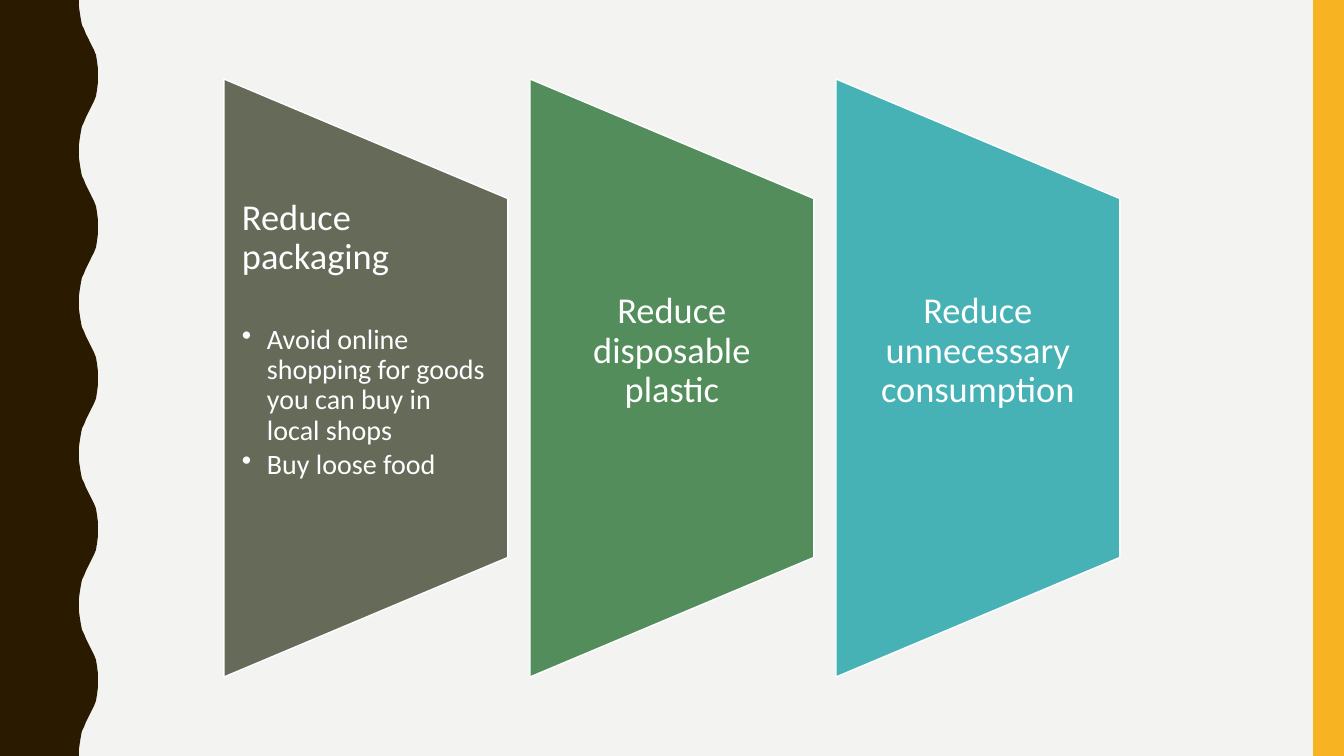
from lxml.etree import SubElement
from pptx import Presentation
from pptx.dml.color import RGBColor
from pptx.enum.shapes import MSO_SHAPE
from pptx.enum.text import MSO_ANCHOR, PP_ALIGN
from pptx.oxml.ns import qn
from pptx.util import Emu, Pt

BACKGROUND = RGBColor(0xF3, 0xF3, 0xF2)
BROWN = RGBColor(0x2A, 0x1A, 0x00)
AMBER = RGBColor(0xF8, 0xB3, 0x23)
OLIVE = RGBColor(0x65, 0x6A, 0x59)
GREEN = RGBColor(0x52, 0x8D, 0x5B)
TEAL = RGBColor(0x46, 0xB2, 0xB5)
WHITE = RGBColor(0xFF, 0xFF, 0xFF)

PANELS = [
    (OLIVE, "Reduce packaging", [
        "Avoid online shopping for goods you can buy in local shops",
        "Buy loose food",
    ]),
    (GREEN, "Reduce disposable plastic", []),
    (TEAL, "Reduce unnecessary consumption", []),
]

SLIDE_WIDTH, SLIDE_HEIGHT = 1344, 756
STRIPE_LEFT = 1313
PANEL_LEFT, PANEL_PITCH = 224, 306
PANEL_WIDTH, PANEL_HEIGHT = 284, 598
TEXT_TOP, TEXT_HEIGHT = 199, 359
TEXT_INSET, LOWER_INSET, BULLET_INDENT = 18, 54, 25

WAVE_LEFT, WAVE_COUNT = 79, 5
WAVE_RISE = [(0, 0), (0, 7), (1, 14), (2, 20), (3, 25), (5, 29), (7, 34),
             (9, 38), (11, 42), (13, 46), (15, 50), (17, 55), (18, 61),
             (19, 69), (19, 76)]


def px(value):
    return Emu(round(value * 914400 / 100.8))


def paint(shape, color):
    shape.shadow.inherit = False
    shape.fill.solid()
    shape.fill.fore_color.rgb = color
    shape.line.fill.background()


def add_wave(slide):
    period = SLIDE_HEIGHT / WAVE_COUNT
    fall = [(x, period - y) for x, y in reversed(WAVE_RISE)]
    edge = [(WAVE_LEFT + x, index * period + y)
            for index in range(WAVE_COUNT) for x, y in WAVE_RISE + fall]
    outline = edge + [(0, SLIDE_HEIGHT)]
    builder = slide.shapes.build_freeform(0, 0)
    builder.add_line_segments([(px(x), px(y)) for x, y in outline], close=True)
    paint(builder.convert_to_shape(), BROWN)


def add_text(paragraph, text, size):
    paragraph.line_spacing = 0.9
    run = paragraph.add_run()
    run.text = text
    run.font.name = "Calibri"
    run.font.size = Pt(size)
    run.font.color.rgb = WHITE


def add_bullet(paragraph, text):
    paragraph.space_after = Pt(3)
    add_text(paragraph, text, 20)
    properties = paragraph._p.get_or_add_pPr()
    properties.set("marL", str(px(BULLET_INDENT)))
    properties.set("indent", str(-px(BULLET_INDENT)))
    SubElement(properties, qn("a:buChar")).set("char", "•")


def add_panel(slide, left, color, heading, bullets):
    shape = slide.shapes.add_shape(
        MSO_SHAPE.FLOWCHART_MANUAL_OPERATION,
        px(left + (PANEL_WIDTH - PANEL_HEIGHT) / 2),
        px((SLIDE_HEIGHT - PANEL_WIDTH) / 2),
        px(PANEL_HEIGHT), px(PANEL_WIDTH))
    shape.rotation = 270
    paint(shape, color)
    shape.line.color.rgb = WHITE
    shape.line.width = Pt(1)

    box = slide.shapes.add_textbox(
        px(left), px(TEXT_TOP), px(PANEL_WIDTH), px(TEXT_HEIGHT))
    frame = box.text_frame
    frame.word_wrap = True
    frame.margin_left = frame.margin_right = px(TEXT_INSET)
    frame.margin_top = frame.margin_bottom = 0
    title = frame.paragraphs[0]
    add_text(title, heading, 26)
    if bullets:
        frame.vertical_anchor = MSO_ANCHOR.TOP
        title.space_after = Pt(34)
    else:
        frame.vertical_anchor = MSO_ANCHOR.MIDDLE
        frame.margin_bottom = px(LOWER_INSET)
        title.alignment = PP_ALIGN.CENTER
    for bullet in bullets:
        add_bullet(frame.add_paragraph(), bullet)


def main():
    presentation = Presentation()
    presentation.slide_width = px(SLIDE_WIDTH)
    presentation.slide_height = px(SLIDE_HEIGHT)
    slide = presentation.slides.add_slide(presentation.slide_layouts[6])
    slide.background.fill.solid()
    slide.background.fill.fore_color.rgb = BACKGROUND

    add_wave(slide)
    stripe = slide.shapes.add_shape(
        MSO_SHAPE.RECTANGLE, px(STRIPE_LEFT), 0,
        px(SLIDE_WIDTH - STRIPE_LEFT), px(SLIDE_HEIGHT))
    paint(stripe, AMBER)
    for index, (color, heading, bullets) in enumerate(PANELS):
        left = PANEL_LEFT + index * PANEL_PITCH
        add_panel(slide, left, color, heading, bullets)
    presentation.save("out.pptx")


if __name__ == "__main__":
    main()
